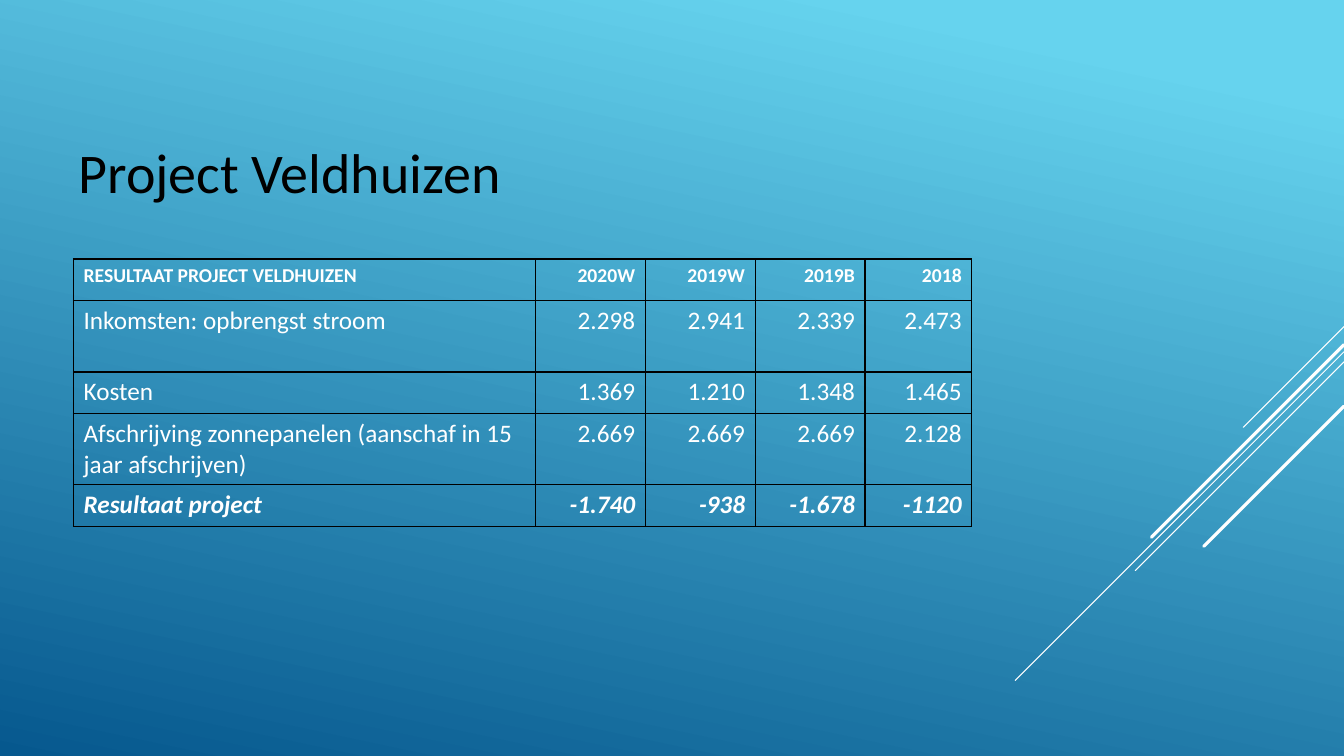
from lxml import etree
from pptx import Presentation
from pptx import util as u
from pptx.dml.color import RGBColor
from pptx.enum import shapes, text
from pptx.oxml.ns import qn

COLORS = {"sky": "66D3EE", "deep": "06588E", "white": "FFFFFF", "black": "000000"}
FONT = "Calibri"
SLIDE_WIDTH, SLIDE_HEIGHT = 13.33, 7.5

# Each ray starts at the right edge and falls at 45 degrees: top, run, weight
RAYS = [
    (3.24, 1.00, 0.75),
    (3.49, 3.26, 0.75),
    (3.59, 2.07, 0.75),
    (3.42, 1.91, 2.25),
    (4.03, 1.39, 2.25),
]

RESULTS = [
    ["RESULTAAT PROJECT VELDHUIZEN", "2020W", "2019W", "2019B", "2018"],
    ["Inkomsten: opbrengst stroom", "2.298", "2.941", "2.339", "2.473"],
    ["Kosten", "1.369", "1.210", "1.348", "1.465"],
    ["Afschrijving zonnepanelen (aanschaf in 15 jaar afschrijven)",
     "2.669", "2.669", "2.669", "2.128"],
    ["Resultaat project", "-1.740", "-938", "-1.678", "-1120"],
]
COLUMN_WIDTHS = [4.58, 1.09, 1.09, 1.09, 1.06]
ROW_HEIGHTS = [0.41, 0.71, 0.41, 0.71, 0.41]
HEADER_FORMAT = {"size": u.Pt(14), "bold": True, "italic": False}
BODY_FORMAT = {"size": u.Pt(18), "bold": False, "italic": False}
TOTAL_FORMAT = {"size": u.Pt(18), "bold": True, "italic": True}
ROW_FORMATS = [HEADER_FORMAT] + [BODY_FORMAT] * 3 + [TOTAL_FORMAT]


def rgb(name):
    return RGBColor.from_string(COLORS[name])


def write(paragraph, words, color, font_format):
    run = paragraph.add_run()
    run.text = words
    run.font.name = FONT
    run.font.color.rgb = rgb(color)
    for key, value in font_format.items():
        setattr(run.font, key, value)


def paint_background(slide):
    fill = slide.background.fill
    fill.gradient()
    fill.gradient_angle = 258
    for stop, position, color in zip(fill.gradient_stops, (0.1, 1), ("sky", "deep")):
        stop.position = position
        stop.color.rgb = rgb(color)


def add_ray(slide, top, run, weight):
    ray = slide.shapes.add_connector(
        shapes.MSO_CONNECTOR.STRAIGHT,
        u.Inches(SLIDE_WIDTH), u.Inches(top),
        u.Inches(SLIDE_WIDTH - run), u.Inches(top + run))
    ray.line.color.rgb = rgb("white")
    ray.line.width = u.Pt(weight)
    ray.get_or_add_ln().set("cap", "rnd")
    etree.SubElement(ray._element.spPr, qn("a:effectLst"))


def add_title(slide, words):
    title = slide.shapes.add_textbox(
        u.Inches(0.73), u.Inches(1.32), u.Inches(5.23), u.Inches(0.77))
    frame = title.text_frame
    frame_format = {"word_wrap": True, "auto_size": text.MSO_AUTO_SIZE.SHAPE_TO_FIT_TEXT}
    frame_format.update({f"margin_{side}": u.Inches(0.05)
                         for side in ("left", "top", "right", "bottom")})
    for key, value in frame_format.items():
        setattr(frame, key, value)
    write(frame.paragraphs[0], words, "black", {"size": u.Pt(40)})


def add_borders(cell):
    properties = cell._tc.get_or_add_tcPr()
    for side in ("lnL", "lnR", "lnT", "lnB"):
        border = etree.SubElement(properties, qn(f"a:{side}"), w=str(u.Pt(1)))
        solid = etree.SubElement(border, qn("a:solidFill"))
        etree.SubElement(solid, qn("a:srgbClr"), val=COLORS["black"])


def add_results_table(slide):
    results = slide.shapes.add_table(
        len(RESULTS), len(COLUMN_WIDTHS), u.Inches(0.73), u.Inches(2.57),
        u.Inches(sum(COLUMN_WIDTHS)), u.Inches(sum(ROW_HEIGHTS))).table
    results.first_row = results.horz_banding = False
    for column, width in zip(results.columns, COLUMN_WIDTHS):
        column.width = u.Inches(width)
    for row, height, values, row_format in zip(
            results.rows, ROW_HEIGHTS, RESULTS, ROW_FORMATS):
        row.height = u.Inches(height)
        for index, (cell, value) in enumerate(zip(row.cells, values)):
            add_borders(cell)
            cell.fill.background()
            paragraph = cell.text_frame.paragraphs[0]
            paragraph.alignment = text.PP_ALIGN.RIGHT if index else text.PP_ALIGN.LEFT
            write(paragraph, value, "white", row_format)


def main():
    deck = Presentation()
    deck.slide_width = u.Inches(SLIDE_WIDTH)
    deck.slide_height = u.Inches(SLIDE_HEIGHT)
    slide = deck.slides.add_slide(deck.slide_layouts[6])

    # Backdrop
    paint_background(slide)
    for ray in RAYS:
        add_ray(slide, *ray)

    # Content
    add_results_table(slide)
    add_title(slide, "Project Veldhuizen")
    deck.save("out.pptx")


if __name__ == "__main__":
    main()
